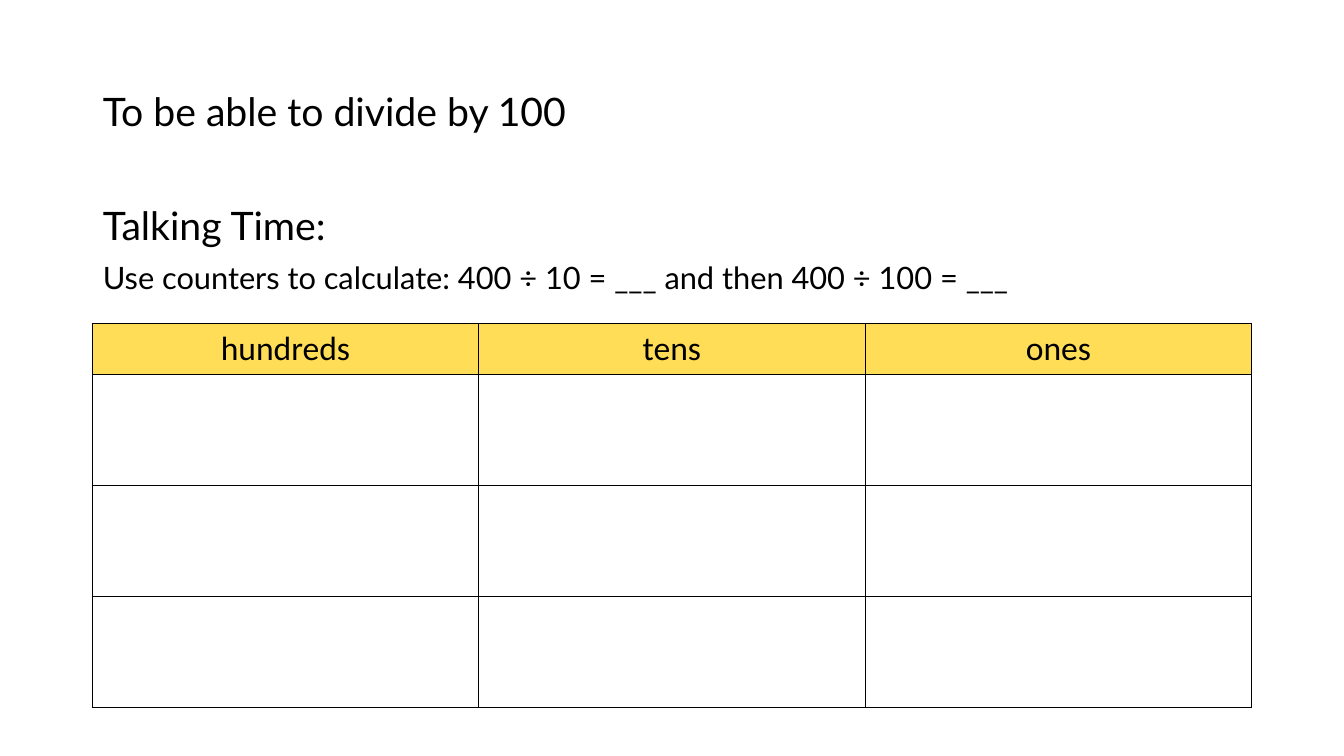
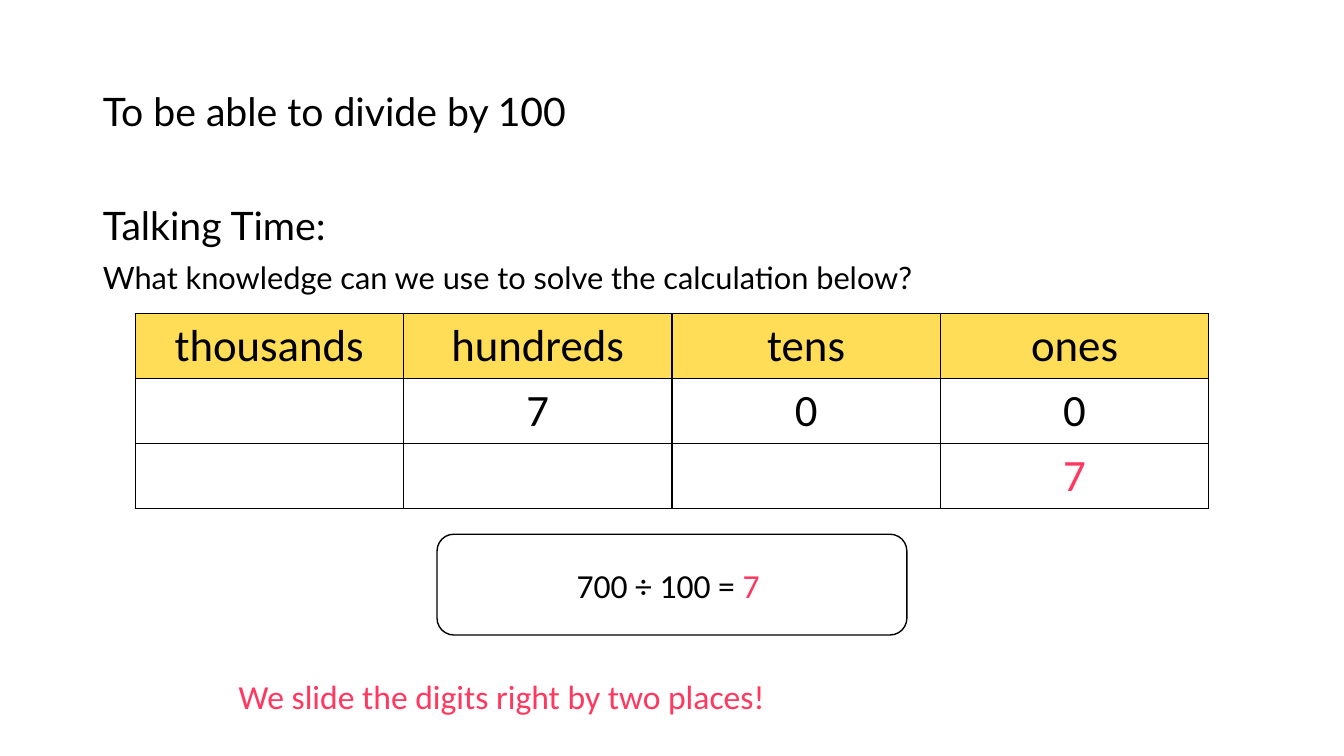
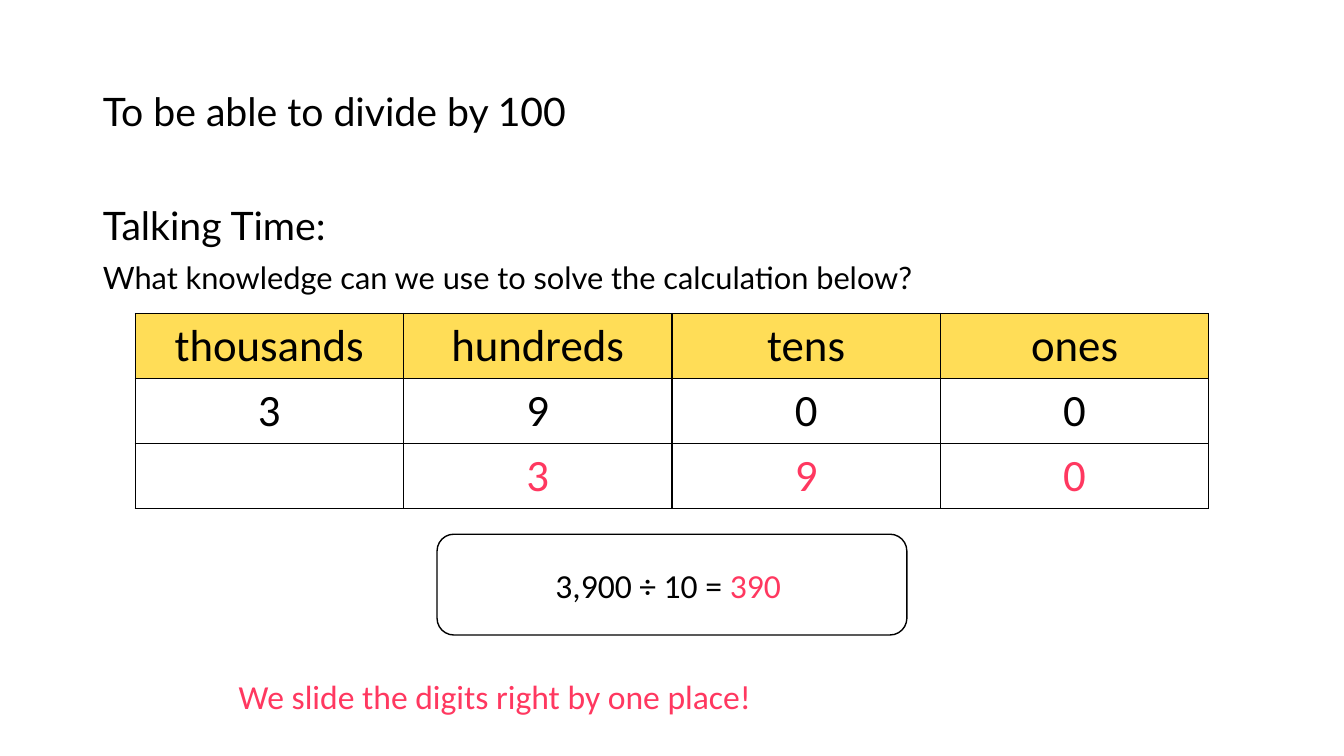
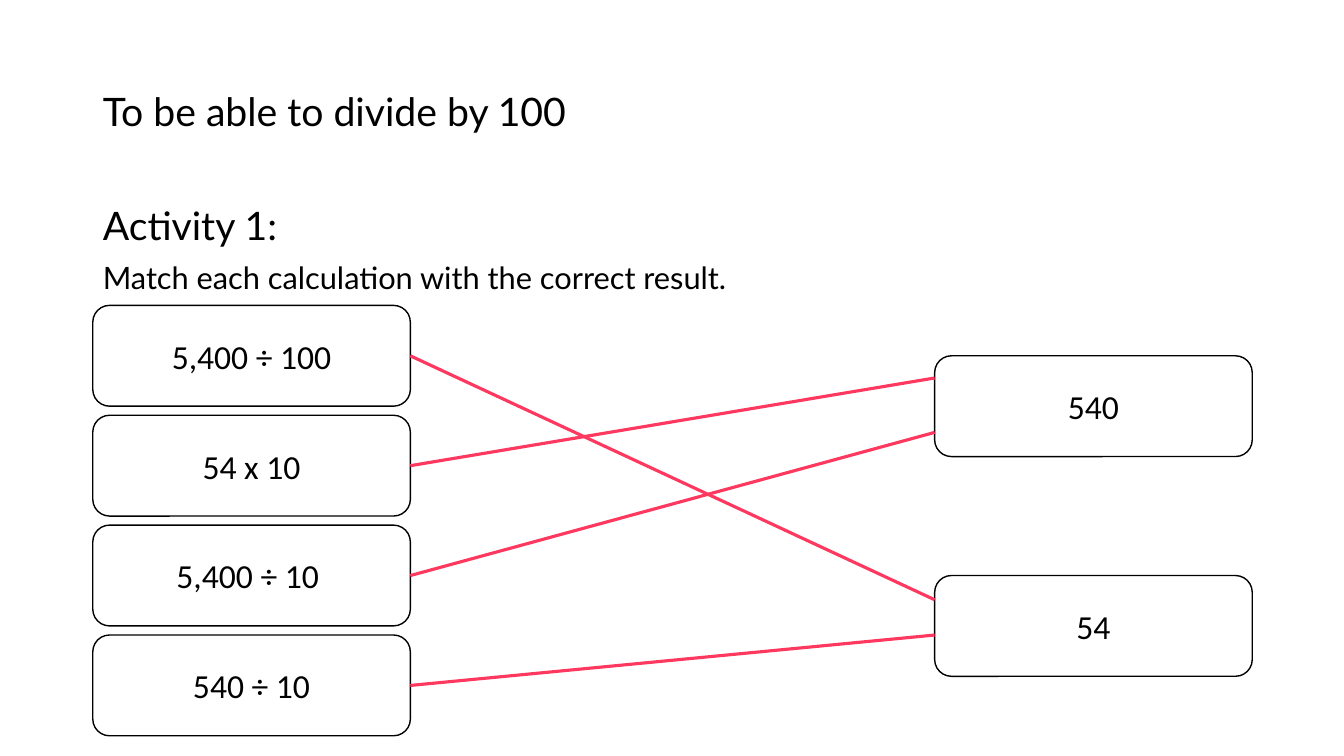
from lxml.etree import SubElement
from pptx import Presentation
from pptx.dml.color import RGBColor
from pptx.enum.shapes import MSO_CONNECTOR as Connector, MSO_SHAPE as Shape
from pptx.enum.text import MSO_ANCHOR as Anchor, MSO_AUTO_SIZE as AutoSize, PP_ALIGN as Align
from pptx.oxml import parse_xml
from pptx.oxml.ns import nsdecls, qn
from pptx.util import Inches, Pt

# Shared look
COLOURS = {"ink": "000000", "answer": "FF3860", "header": "FFDD57", "paper": "FFFFFF"}
TITLE_FONT, TEXT_FONT = "Lato", "Calibri"
TITLE = "To be able to divide by 100"
LAYOUT_NAME_INDEX = 1

# Shared grid, in inches
WIDTH, HEIGHT = 13.33, 7.5
MARGIN = 0.92
CONTENT = 11.5
RIGHT = MARGIN + CONTENT
TITLE_BOX = (MARGIN, 0.4, 9.6, 1.45)
BODY_BOX = (MARGIN, 2, CONTENT, 4.76)
BOX_HEIGHT = 1
MATCH_WIDTH, MATCH_TOP, MATCH_PITCH = 3.15, 3.03, 1.09


def colour(name):
    return RGBColor.from_string(COLOURS[name])


def inches(lengths):
    return [Inches(length) for length in lengths]


def place(shape, box):
    for side, length in zip(("left", "top", "width", "height"), inches(box)):
        setattr(shape, side, length)


def add_run(paragraph, text, size, font=TEXT_FONT, ink="ink"):
    run = paragraph.add_run()
    run.text = text
    for name, value in {"size": Pt(size), "name": font, "bold": False}.items():
        setattr(run.font, name, value)
    run.font.color.rgb = colour(ink)


# Title and task text
def set_up_layout(presentation):
    layout = presentation.slide_layouts[LAYOUT_NAME_INDEX]
    for placeholder, box in zip(layout.placeholders, (TITLE_BOX, BODY_BOX)):
        place(placeholder, box)
    return layout


def add_lesson_slide(presentation, layout, heading, task):
    slide = presentation.slides.add_slide(layout)
    title, body = slide.placeholders
    for placeholder, anchor in ((title, Anchor.MIDDLE), (body, Anchor.TOP)):
        placeholder.text_frame.auto_size = AutoSize.NONE
        placeholder.text_frame.vertical_anchor = anchor

    paragraph = title.text_frame.paragraphs[0]
    paragraph.alignment, paragraph.line_spacing = Align.LEFT, 0.9
    add_run(paragraph, TITLE, 28, TITLE_FONT)

    frame = body.text_frame
    lines = ((frame.paragraphs[0], heading, 28, 0), (frame.add_paragraph(), task, 22, 10))
    for paragraph, text, size, space in lines:
        properties = paragraph._p.get_or_add_pPr()
        properties.set("marL", "0")
        properties.set("indent", "0")
        SubElement(properties, qn("a:buNone"))
        for name, value in {"line_spacing": 0.9, "space_before": Pt(space)}.items():
            setattr(paragraph, name, value)
        add_run(paragraph, text, size, TITLE_FONT)
    return slide


# Place value tables
def style_cell(cell, fill):
    cell.fill.solid()
    cell.fill.fore_color.rgb = colour(fill)
    properties = cell._tc.get_or_add_tcPr()
    for index, side in enumerate("LRTB"):
        properties.insert(index, parse_xml(
            f'<a:ln{side} {nsdecls("a")} w="12700"><a:solidFill>'
            f'<a:srgbClr val="{COLOURS["ink"]}"/></a:solidFill></a:ln{side}>'))


def add_place_value_table(slide, rows, top, width, heights, size):
    columns = len(rows[0])
    frame = slide.shapes.add_table(
        len(rows), columns, *inches(((WIDTH - width) / 2, top, width, sum(heights))))
    table = frame.table
    table.first_row = table.horz_banding = False
    for column in table.columns:
        column.width = Inches(width / columns)
    for row_index, (texts, height) in enumerate(zip(rows, heights)):
        table.rows[row_index].height = Inches(height)
        for column_index, text in enumerate(texts):
            cell = table.cell(row_index, column_index)
            style_cell(cell, "paper" if row_index else "header")
            if text:
                paragraph = cell.text_frame.paragraphs[0]
                paragraph.alignment = Align.CENTER
                add_run(paragraph, text, size, ink="answer" if row_index == 2 else "ink")


# Rounded boxes and matching lines
def add_box(slide, box, runs, framed=True):
    shape = slide.shapes.add_shape(Shape.ROUNDED_RECTANGLE, *inches(box))
    shape.shadow.inherit = False
    if framed:
        shape.fill.solid()
        shape.fill.fore_color.rgb = colour("paper")
        shape.line.color.rgb = colour("ink")
        shape.line.width = Pt(1)
    else:
        shape.fill.background()
        shape.line.fill.background()
    shape.text_frame.word_wrap = True
    shape.text_frame.vertical_anchor = Anchor.MIDDLE
    paragraph = shape.text_frame.paragraphs[0]
    paragraph.alignment = Align.CENTER if framed else Align.LEFT
    for text, ink in runs:
        add_run(paragraph, text, 24, ink=ink)
    return shape


def add_match(slide, calculation, result, share):
    """Join a calculation to a point at a share of the result's height."""
    end = result.left, result.top + int(result.height * share)
    line = slide.shapes.add_connector(Connector.STRAIGHT, 0, 0, *end)
    line.begin_connect(calculation, 3)
    line.line.color.rgb = colour("answer")
    line.line.width = Pt(2.25)
    SubElement(line._element.spPr, qn("a:effectLst"))


# Slides
def add_counters_slide(presentation, layout):
    slide = add_lesson_slide(
        presentation, layout, "Talking Time:",
        "Use counters to calculate: 400 ÷ 10 = ___ and then 400 ÷ 100 = ___")
    rows = [["hundreds", "tens", "ones"]] + [[""] * 3] * 3
    add_place_value_table(slide, rows, 3.21, CONTENT, [0.5] + [1.1] * 3, 24)


def add_digits_slide(presentation, layout, digits, shifted, calculation, answer, rule):
    slide = add_lesson_slide(
        presentation, layout, "Talking Time:",
        "What knowledge can we use to solve the calculation below?")
    width = 4.66
    add_box(slide, ((WIDTH - width) / 2, 5.3, width, BOX_HEIGHT),
            [(calculation, "ink"), (answer, "answer")])
    add_box(slide, (2.22, 6.41, 8.09, BOX_HEIGHT), [(rule, "answer")], framed=False)
    rows = [["thousands", "hundreds", "tens", "ones"], digits, shifted]
    add_place_value_table(slide, rows, 3.11, 10.65, [0.645] * 3, 32)


def add_matching_slide(presentation, layout):
    slide = add_lesson_slide(presentation, layout, "Activity 1:",
                             "Match each calculation with the correct result.")
    calculations = [
        add_box(slide, (MARGIN, MATCH_TOP + row * MATCH_PITCH, MATCH_WIDTH, BOX_HEIGHT),
                [(text, "ink")])
        for row, text in enumerate(("5,400 ÷ 100", "54 x 10", "5,400 ÷ 10 ", "540 ÷ 10"))]
    results = [
        add_box(slide, (RIGHT - MATCH_WIDTH, MATCH_TOP + BOX_HEIGHT / 2 + row * MATCH_PITCH,
                        MATCH_WIDTH, BOX_HEIGHT), [(text, "ink")])
        for row, text in ((0, "540"), (2, "54"))]
    matches = ((1, 0.24), (0, 0.22), (0, 0.76), (1, 0.59))
    for calculation, (result, share) in zip(calculations, matches):
        add_match(slide, calculation, results[result], share)


def main():
    presentation = Presentation()
    presentation.slide_width, presentation.slide_height = inches((WIDTH, HEIGHT))
    layout = set_up_layout(presentation)
    add_counters_slide(presentation, layout)
    add_digits_slide(presentation, layout, ["", "7", "0", "0"], ["", "", "", "7"],
                     "700 ÷ 100 = ", "7 ", "We slide the digits right by two places!")
    add_digits_slide(presentation, layout, ["3", "9", "0", "0"], ["", "3", "9", "0"],
                     "3,900 ÷ 10 = ", "390 ", "We slide the digits right by one place!")
    add_matching_slide(presentation, layout)
    presentation.save("out.pptx")


if __name__ == "__main__":
    main()
